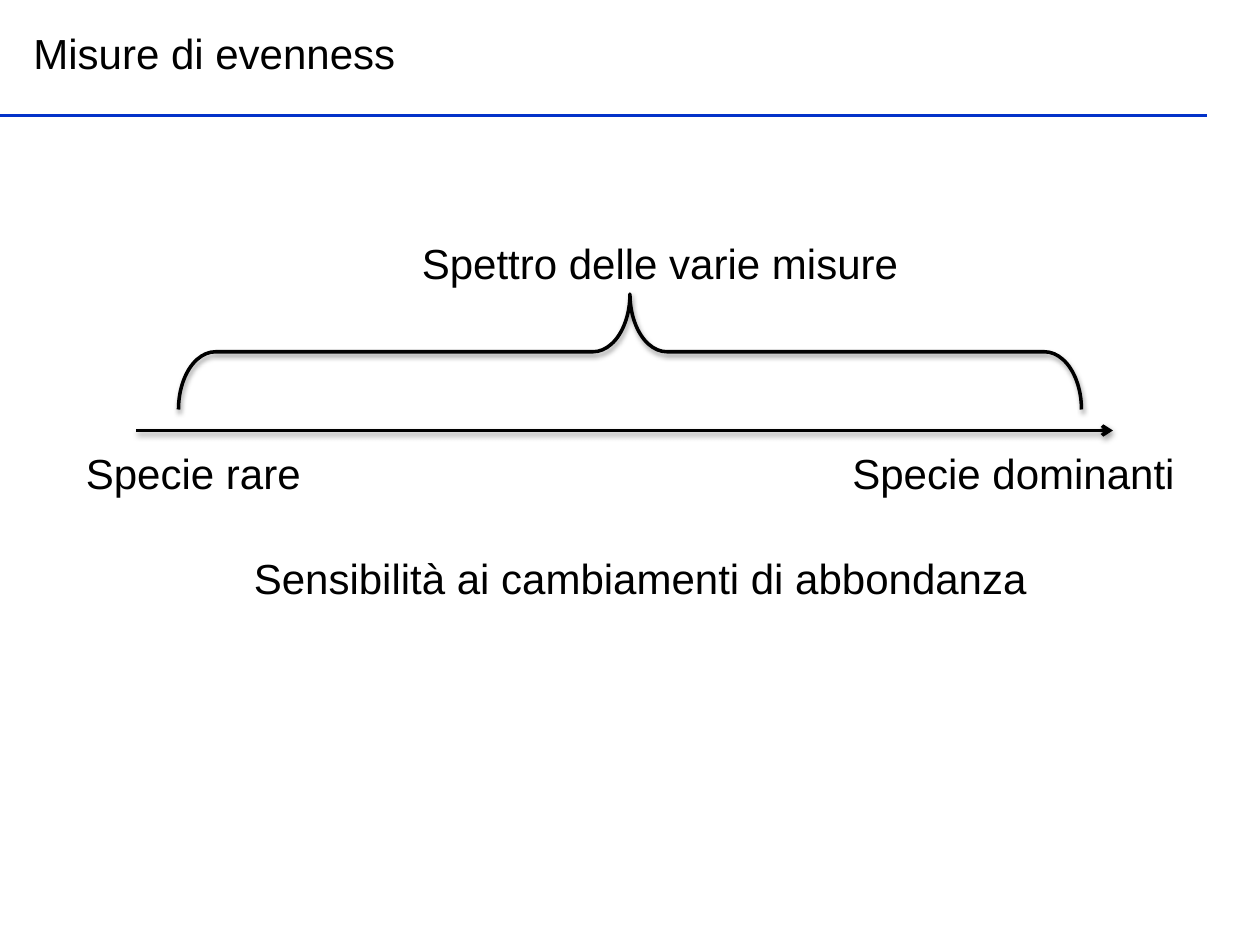
from lxml import etree
from pptx import Presentation
from pptx import util as u
from pptx.dml.color import RGBColor
from pptx.enum import shapes, text
from pptx.oxml import ns

COLUMNS, ROWS = 120, 90
CELL = u.Inches(10) // COLUMNS
BLACK = RGBColor(0x00, 0x00, 0x00)
BLUE = RGBColor(0x03, 0x32, 0xC9)
FRAME_FORMAT = {
    "word_wrap": True,
    "vertical_anchor": text.MSO_ANCHOR.MIDDLE,
    "auto_size": text.MSO_AUTO_SIZE.SHAPE_TO_FIT_TEXT,
}
FONT_FORMAT = {"name": "Arial", "size": u.Pt(24)}
SHADOW_FORMAT = {
    "blurRad": u.Pt(3.1),
    "dist": u.Pt(1.6),
    "dir": 90 * 60000,
    "rotWithShape": 0,
}
LABELS = [
    ("Misure di evenness", 2, 2, 102),
    ("Specie rare", 7, 42, 24),
    ("Specie dominanti", 80, 42, 38),
    ("Sensibilità ai cambiamenti di abbondanza", 23, 52, 77),
    ("Spettro delle varie misure", 39, 22, 49),
]


def cells(*counts):
    """Turn grid counts into slide lengths."""
    return [round(count * CELL) for count in counts]


def apply_format(target, values):
    """Set each named attribute on the target."""
    for name, value in values.items():
        setattr(target, name, value)


def add_child(parent, tag, **attributes):
    """Append a DrawingML element and return it."""
    values = {name: str(value) for name, value in attributes.items()}
    return etree.SubElement(parent, ns.qn(tag), values)


def set_outline(shape, color, shadow):
    """Give a shape its line and its effect list."""
    shape.line.color.rgb = color
    shape.line.width = u.Pt(2)
    effects = add_child(shape.element.spPr, "a:effectLst")
    if shadow:
        outer = add_child(effects, "a:outerShdw", **{k: int(v) for k, v in SHADOW_FORMAT.items()})
        add_child(add_child(outer, "a:srgbClr", val=BLACK), "a:alpha", val=38000)


def add_label(slide, wording, left, top, width):
    """Add one line of text on the grid."""
    frame = slide.shapes.add_textbox(*cells(left, top, width, 6)).text_frame
    apply_format(frame, FRAME_FORMAT)
    run = frame.paragraphs[0].add_run()
    run.text = wording
    apply_format(run.font, FONT_FORMAT)
    run.font.color.rgb = BLACK


def add_rule(slide, start, end, row, color, arrow=False):
    """Add a horizontal line, with a shadow and head if it is an arrow."""
    line = slide.shapes.add_connector(
        shapes.MSO_CONNECTOR.STRAIGHT, *cells(start, row, end, row))
    set_outline(line, color, arrow)
    if arrow:
        add_child(line.line._get_or_add_ln(), "a:tailEnd", type="arrow")


def add_brace(slide, left, top, width, height):
    """Add a brace that points up and spans the given grid area."""
    turned_left = left + (width - height) / 2
    turned_top = top + (height - width) / 2
    brace = slide.shapes.add_shape(
        shapes.MSO_SHAPE.RIGHT_BRACE, *cells(turned_left, turned_top, height, width))
    brace.rotation = 270
    brace.adjustments[0], brace.adjustments[1] = 0.32, 0.5
    brace.fill.background()
    set_outline(brace, BLACK, True)


def main():
    """Build and save the slide."""
    presentation = Presentation()
    apply_format(presentation, {"slide_width": COLUMNS * CELL, "slide_height": ROWS * CELL})
    slide = presentation.slides.add_slide(presentation.slide_layouts[6])
    add_rule(slide, 0, 115, 11, BLUE)
    add_rule(slide, 13, 106, 41, BLACK, arrow=True)
    add_brace(slide, 17, 28, 86, 11)
    for label in LABELS:
        add_label(slide, *label)
    presentation.save("out.pptx")


if __name__ == "__main__":
    main()
